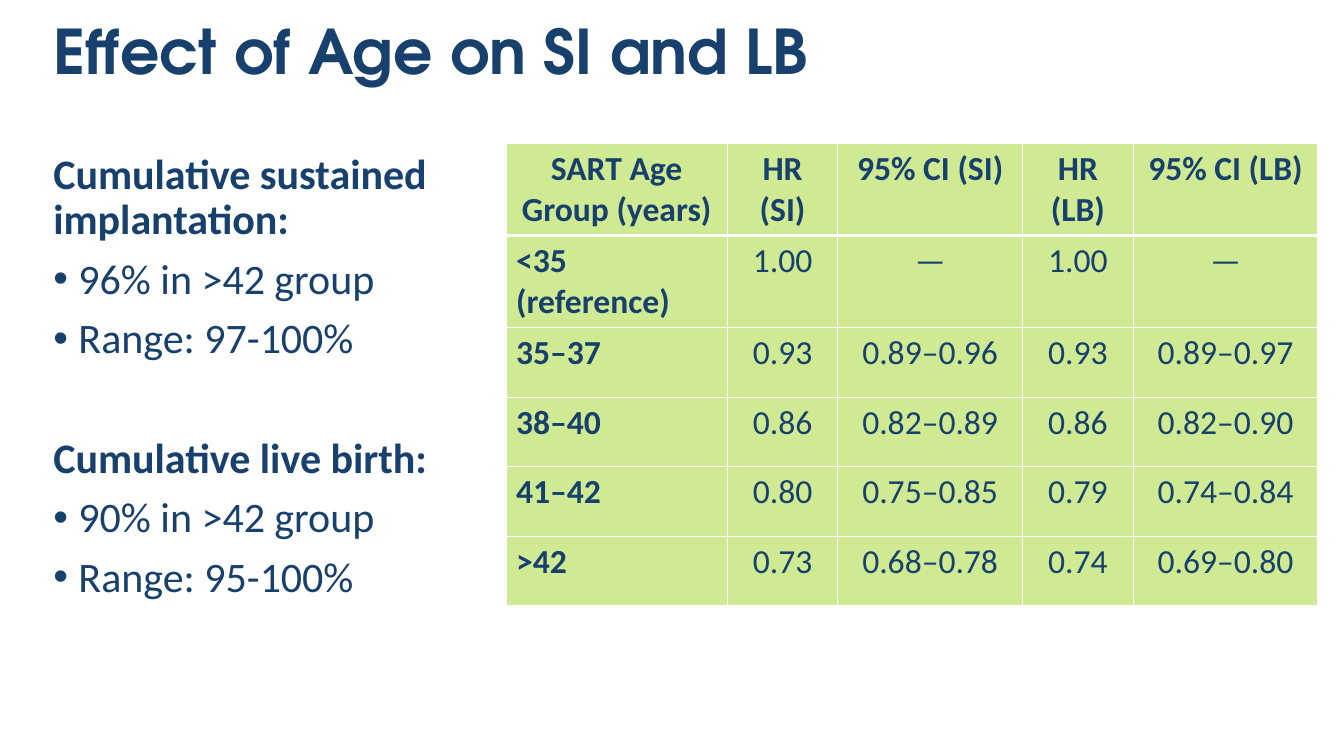
from lxml.etree import SubElement
from pptx import Presentation
from pptx.dml.color import RGBColor
from pptx.enum.text import MSO_ANCHOR, MSO_AUTO_SIZE, PP_ALIGN
from pptx.oxml.ns import qn
from pptx.util import Pt

NAVY = RGBColor(0x17, 0x40, 0x6D)
LIME = RGBColor(0xD0, 0xEA, 0x93)
WHITE = RGBColor(0xFF, 0xFF, 0xFF)

FINDINGS = [
    ("Cumulative sustained implantation:", ["96% in >42 group", "Range: 97-100%"]),
    ("Cumulative live birth:", ["90% in >42 group", "Range: 95-100%"]),
]
HAZARD_RATIOS = [
    ["SART Age Group (years)", "HR (SI)", "95% CI (SI)", "HR (LB)", "95% CI (LB)"],
    ["<35 (reference)", "1.00", "—", "1.00", "—"],
    ["35–37", "0.93", "0.89–0.96", "0.93", "0.89–0.97"],
    ["38–40", "0.86", "0.82–0.89", "0.86", "0.82–0.90"],
    ["41–42", "0.80", "0.75–0.85", "0.79", "0.74–0.84"],
    [">42", "0.73", "0.68–0.78", "0.74", "0.69–0.80"],
]
COLUMN_WIDTHS = [158, 79, 132, 79, 132]


def style_font(para, size, bold, name="Calibri"):
    """Set the font of a whole paragraph."""
    para.font.name = name
    para.font.size = Pt(size)
    para.font.bold = bold
    para.font.color.rgb = NAVY


def add_bullet(para):
    """Give a paragraph a round bullet with a hanging indent."""
    properties = para._p.get_or_add_pPr()
    properties.set("marL", str(Pt(18)))
    properties.set("indent", str(-Pt(18)))
    SubElement(properties, qn("a:buFont"), typeface="Arial")
    SubElement(properties, qn("a:buChar"), char="•")


def add_borders(cell, bottom_width):
    """Draw white borders round a table cell."""
    properties = cell._tc.get_or_add_tcPr()
    for side, width in (("L", 1), ("R", 1), ("T", 1), ("B", bottom_width)):
        line = SubElement(properties, qn(f"a:ln{side}"), w=str(Pt(width)))
        fill = SubElement(line, qn("a:solidFill"))
        SubElement(fill, qn("a:srgbClr"), val=str(WHITE))


def fill_title(page, left, top, width, height):
    """Place the title on the first of two lines."""
    title = page.shapes.title
    title.left, title.top, title.width, title.height = map(Pt, (left, top, width, height))
    frame = title.text_frame
    frame.auto_size = MSO_AUTO_SIZE.NONE
    frame.vertical_anchor = MSO_ANCHOR.MIDDLE
    para = frame.paragraphs[0]
    para.text = "Effect of Age on SI and LB"
    para.add_line_break()
    para.alignment = PP_ALIGN.LEFT
    para.line_spacing = 0.9
    style_font(para, 44, True, "TeX Gyre Adventor")


def add_findings(page, left, top, width, height):
    """List each outcome as a bold heading with bullets."""
    box = page.shapes.add_textbox(Pt(left), Pt(top), Pt(width), Pt(height))
    frame = box.text_frame
    frame.word_wrap = True
    for group, (heading, points) in enumerate(FINDINGS):
        para = frame.add_paragraph() if group else frame.paragraphs[0]
        para.text = heading
        para.line_spacing = 0.9
        para.space_before = Pt(53 if group else 0)
        style_font(para, 30, True)
        for point in points:
            para = frame.add_paragraph()
            para.text = point
            para.line_spacing = 0.9
            para.space_before = Pt(10)
            add_bullet(para)
            style_font(para, 30, False)


def add_ratio_table(page, left, top, width, header_height, row_height):
    """Tabulate hazard ratios by age group."""
    height = header_height + row_height * (len(HAZARD_RATIOS) - 1)
    table = page.shapes.add_table(
        len(HAZARD_RATIOS), len(COLUMN_WIDTHS), Pt(left), Pt(top), Pt(width), Pt(height)
    ).table
    for column, column_width in zip(table.columns, COLUMN_WIDTHS):
        column.width = Pt(column_width)
    for r, values in enumerate(HAZARD_RATIOS):
        table.rows[r].height = Pt(row_height if r else header_height)
        for c, value in enumerate(values):
            cell = table.cell(r, c)
            add_borders(cell, 1 if r else 3)
            cell.fill.solid()
            cell.fill.fore_color.rgb = LIME
            cell.text = value
            para = cell.text_frame.paragraphs[0]
            para.alignment = PP_ALIGN.LEFT if r and not c else PP_ALIGN.CENTER
            style_font(para, 24, r == 0 or c == 0)


def main():
    """Build the slide and save it."""
    deck = Presentation()
    deck.slide_width, deck.slide_height = Pt(960), Pt(540)
    page = deck.slides.add_slide(deck.slide_layouts[5])
    fill_title(page, 31, 22.3, 864, 86.4)
    add_ratio_table(page, 361.5, 102.5, sum(COLUMN_WIDTHS), 56, 49.7)
    add_findings(page, 31, 106, 316, 347)
    deck.save("out.pptx")


if __name__ == "__main__":
    main()
